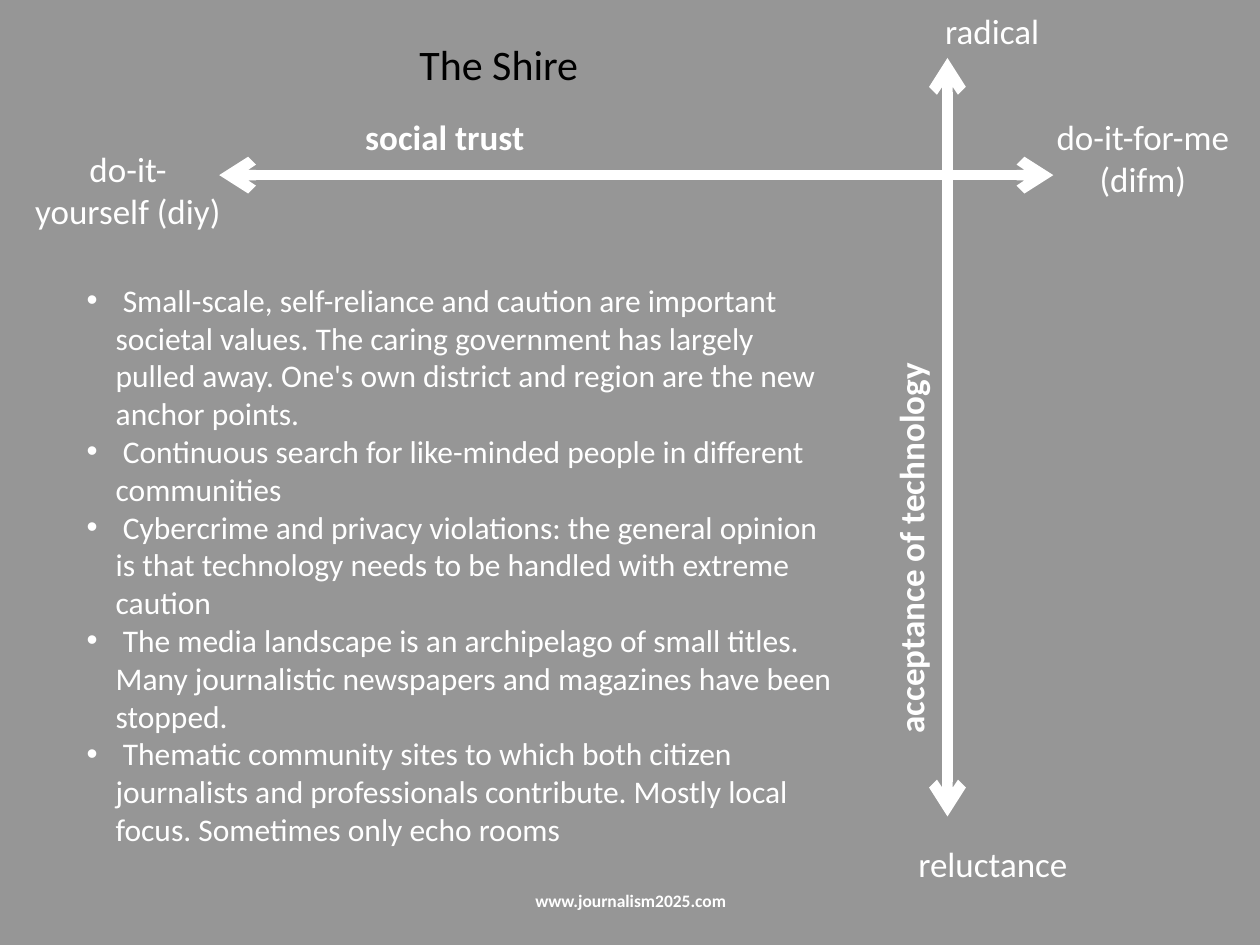
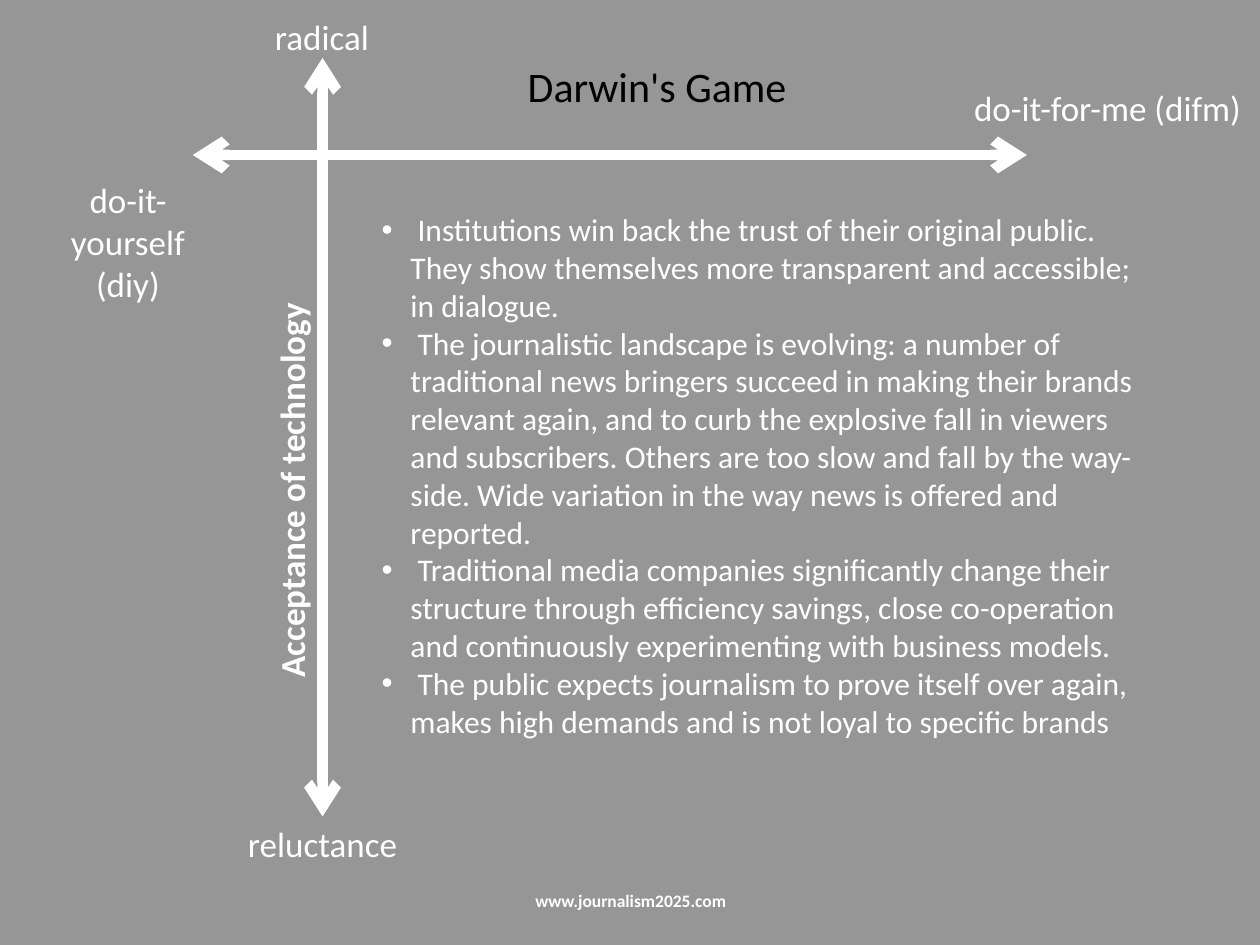
import pptx
import pptx.dml.color
import pptx.enum.shapes
import pptx.enum.text
import pptx.oxml.xmlchemy
import pptx.util
from lxml import etree
from pptx.oxml.ns import qn

Inches = pptx.util.Inches
Align = pptx.enum.text.PP_ALIGN
Anchor = pptx.enum.text.MSO_ANCHOR

GRAY, WHITE, BLACK = "969696", "FFFFFF", "000000"
FONT = "Calibri"
LABEL_SIZE, BODY_SIZE, TITLE_SIZE, FOOTER_SIZE = 20, 18, 24, 10
AXIS_WEIGHT = 6
AXIS_TOP, AXIS_BOTTOM, AXIS_LENGTH = 0.46, 6.48, 6.62
BULLET_INDENT = 0.23
DIY, DIFM = "do-it-yourself (diy)", "do-it-for-me (difm)"

SHIRE_POINTS = [
    " Small-scale, self-reliance and caution are important societal values. The caring government "
    "has largely pulled away. One's own district and region are the new anchor points.",
    " Continuous search for like-minded people in different communities",
    " Cybercrime and privacy violations: the general opinion is that technology needs to be "
    "handled with extreme caution",
    " The media landscape is an archipelago of small titles. Many journalistic newspapers and "
    "magazines have been stopped.",
    " Thematic community sites to which both citizen journalists and professionals contribute. "
    "Mostly local focus. Sometimes only echo rooms",
]
DARWIN_POINTS = [
    " Institutions win back the trust of their original public. They show themselves more "
    "transparent and accessible; in dialogue.",
    " The journalistic landscape is evolving: a number of traditional news bringers succeed in "
    "making their brands relevant again, and to curb the explosive fall in viewers and "
    "subscribers. Others are too slow and fall by the way-side. Wide variation in the way news "
    "is offered and reported.",
    " Traditional media companies significantly change their structure through efficiency "
    "savings, close co-operation and continuously experimenting with business models.",
    " The public expects journalism to prove itself over again, makes high demands and is not "
    "loyal to specific brands",
]


def color(hex_string):
    """Turn a hex string into a colour."""
    return pptx.dml.color.RGBColor.from_string(hex_string)


def set_bullet(paragraph):
    """Give a paragraph a round bullet with a hanging indent."""
    properties = paragraph._p.get_or_add_pPr()
    properties.set("marL", str(Inches(BULLET_INDENT)))
    properties.set("indent", str(-Inches(BULLET_INDENT)))
    etree.SubElement(properties, qn("a:buFont"), typeface="Arial")
    etree.SubElement(properties, qn("a:buChar"), char="•")


def add_text(slide, text, left, top, width, height, *, size=LABEL_SIZE, fill=WHITE, bold=False,
             align=Align.LEFT, anchor=Anchor.TOP, rotation=0, bullets=False):
    """Add a text box holding one paragraph per line of text."""
    shape = slide.shapes.add_textbox(Inches(left), Inches(top), Inches(width), Inches(height))
    shape.rotation = rotation
    frame = shape.text_frame
    frame.word_wrap = True
    frame.vertical_anchor = anchor
    frame.text = text
    for paragraph in frame.paragraphs:
        if bullets:
            set_bullet(paragraph)
        paragraph.alignment = align
        font = paragraph.runs[0].font
        font.name = FONT
        font.size = pptx.util.Pt(size)
        font.bold = bold
        font.color.rgb = color(fill)
    return shape


def add_axis(slide, start_x, start_y, end_x, end_y):
    """Add a thick white line with an arrowhead at each end."""
    axis = slide.shapes.add_connector(
        pptx.enum.shapes.MSO_CONNECTOR.STRAIGHT,
        Inches(start_x), Inches(start_y), Inches(end_x), Inches(end_y))
    axis.line.color.rgb = color(WHITE)
    axis.line.width = pptx.util.Pt(AXIS_WEIGHT)
    line = axis.line._get_or_add_ln()
    for end in ("a:headEnd", "a:tailEnd"):
        etree.SubElement(line, qn(end), type="arrow")
    etree.SubElement(axis._element.spPr, qn("a:effectLst"))


def add_axes(slide, technology_x, trust_left, trust_y):
    """Add the technology axis and the social trust axis."""
    add_axis(slide, technology_x, AXIS_BOTTOM, technology_x, AXIS_TOP)
    add_axis(slide, trust_left, trust_y, trust_left + AXIS_LENGTH, trust_y)


def add_end_labels(slide, labels):
    """Add the centred labels at the ends of the axes."""
    for text, *box in labels:
        add_text(slide, text, *box, align=Align.CENTER)


def add_axis_name(slide, text, *box):
    """Add the bold axis name that reads upwards."""
    add_text(slide, text, *box, bold=True, rotation=270)


def add_points(slide, points, *box):
    """Add the bulleted scenario description."""
    add_text(slide, "\n".join(points), *box, size=BODY_SIZE, bullets=True)


def add_title(slide, text, *box, align=Align.LEFT):
    """Add the scenario title."""
    add_text(slide, text, *box, size=TITLE_SIZE, fill=BLACK, align=align)


def add_scenario_slide(presentation):
    """Add a gray slide with the web address at its foot."""
    slide = presentation.slides.add_slide(presentation.slide_layouts[6])
    slide.background.fill.solid()
    slide.background.fill.fore_color.rgb = color(GRAY)
    add_text(slide, "www.journalism2025.com", 3.42, 6.95, 3.17, 0.4, size=FOOTER_SIZE,
             bold=True, align=Align.CENTER, anchor=Anchor.MIDDLE)
    return slide


def build_shire(presentation):
    """Build the scenario of reluctance and self-reliance."""
    slide = add_scenario_slide(presentation)
    add_axes(slide, 7.52, 1.74, 1.39)
    add_text(slide, "social trust", 2.8, 0.87, 5.25, 0.44, bold=True)
    add_axis_name(slide, "acceptance of technology", 5.28, 3.75, 3.9, 0.44)
    add_end_labels(slide, [
        (DIFM, 8.11, 0.87, 1.92, 0.77),
        (DIY, 0.18, 1.12, 1.67, 1.11),
        ("radical", 6.73, 0.03, 2.29, 0.44),
        ("reluctance", 6.74, 6.64, 2.28, 0.44),
    ])
    add_points(slide, SHIRE_POINTS, 0.59, 2.18, 6.14, 4.64)
    add_title(slide, "The Shire", 3.23, 0.26, 3.7, 0.5)


def build_darwin(presentation):
    """Build the scenario of reluctance and trusted institutions."""
    slide = add_scenario_slide(presentation)
    add_axes(slide, 2.56, 1.53, 1.23)
    add_axis_name(slide, "Acceptance of technology", 0.19, 3.13, 4.25, 0.44)
    add_end_labels(slide, [
        (DIFM, 7.58, 0.64, 2.42, 0.44),
        (DIY, 0.42, 1.37, 1.19, 1.11),
        ("radical", 1.41, 0.07, 2.29, 0.44),
        ("reluctance", 1.42, 6.48, 2.28, 0.44),
    ])
    add_points(slide, DARWIN_POINTS, 2.93, 1.62, 6.23, 4.3)
    add_title(slide, "Darwin's Game", 1.22, 0.43, 5.12, 0.5, align=Align.RIGHT)


def main():
    """Build both scenario slides and save them."""
    presentation = pptx.Presentation()
    presentation.slide_width = Inches(10)
    presentation.slide_height = Inches(7.5)
    build_shire(presentation)
    build_darwin(presentation)
    presentation.save("out.pptx")


if __name__ == "__main__":
    main()
